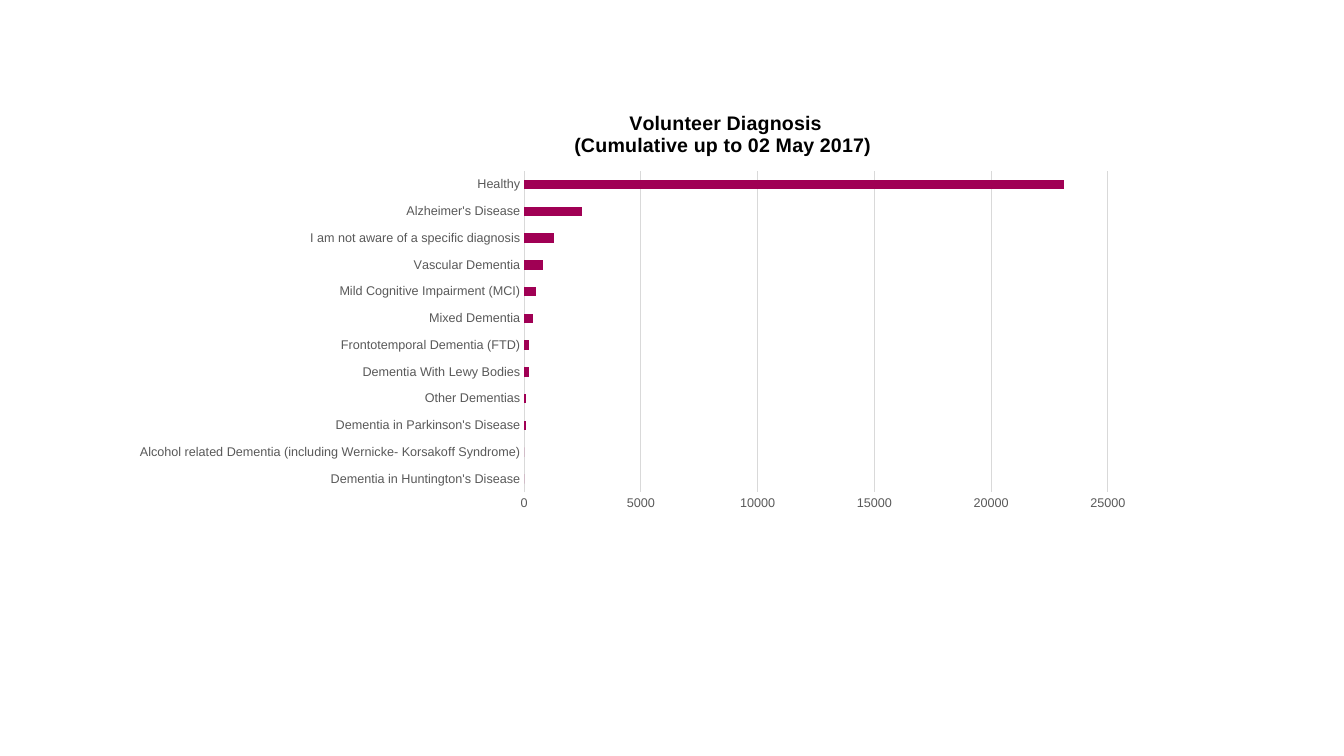
"""Build a slide with a bar chart of volunteer diagnoses."""
import pptx
import pptx.chart.data
import pptx.dml.color
import pptx.enum.chart
import pptx.oxml
import pptx.oxml.ns
import pptx.util

Cm, Pt = pptx.util.Cm, pptx.util.Pt
Color = pptx.dml.color.RGBColor
Kind = pptx.enum.chart

TITLE = "Volunteer Diagnosis\n(Cumulative up to 02 May 2017) "
COUNTS = {
    "Dementia in Huntington's Disease": 0,
    "Alcohol related Dementia (including Wernicke- Korsakoff Syndrome)": 0,
    "Dementia in Parkinson's Disease": 100,
    "Other Dementias": 100,
    "Dementia With Lewy Bodies": 200,
    "Frontotemporal Dementia (FTD)": 200,
    "Mixed Dementia": 400,
    "Mild Cognitive Impairment (MCI)": 500,
    "Vascular Dementia": 800,
    "I am not aware of a specific diagnosis": 1300,
    "Alzheimer's Disease": 2500,
    "Healthy": 23100,
}
FONT = "Arial"
BLACK = Color(0x00, 0x00, 0x00)
GREY = Color(0x59, 0x59, 0x59)
PALE = Color(0xD9, 0xD9, 0xD9)
PLUM = Color(0xA0, 0x00, 0x54)


def style(font, size, color, bold=False):
    """Set the look of a font."""
    font.name, font.size, font.bold = FONT, Pt(size), bold
    font.color.rgb = color


def rule(line):
    """Draw a thin pale line."""
    line.color.rgb = PALE
    line.width = Pt(0.75)


def place(part, index, inner=False, **spots):
    """Fix a chart part at fractions of the chart area."""
    for old in part.findall(pptx.oxml.ns.qn("c:layout")):
        part.remove(old)
    target = '<c:layoutTarget val="inner"/>' if inner else ""
    modes = "".join(f'<c:{key}Mode val="edge"/>' for key in "xy")
    sizes = "".join(f'<c:{key} val="{val}"/>' for key, val in spots.items())
    part.insert(index, pptx.oxml.parse_xml(
        f'<c:layout {pptx.oxml.ns.nsdecls("c")}><c:manualLayout>'
        f'{target}{modes}{sizes}</c:manualLayout></c:layout>'))


def main():
    """Make and save the slide."""
    deck = pptx.Presentation()
    deck.slide_width, deck.slide_height = Cm(33.87), Cm(19.05)
    slide = deck.slides.add_slide(deck.slide_layouts[6])

    data = pptx.chart.data.CategoryChartData()
    data.categories = list(COUNTS)
    data.add_series("Series 1", list(COUNTS.values()))
    chart = slide.shapes.add_chart(
        Kind.XL_CHART_TYPE.BAR_CLUSTERED,
        Cm(3.02), Cm(2.39), Cm(25.86), Cm(10.69), data).chart
    chart.has_legend = False
    style(chart.font, 10, BLACK)

    chart.has_title = True
    head = chart.chart_title
    head.text_frame.text = TITLE
    for para in head.text_frame.paragraphs:
        style(para.font, 14, BLACK, True)
    place(head._element, 1, x=0.44, y=0.03)

    plot = chart.plots[0]
    plot.gap_width = 182
    plot.vary_by_categories = False
    fill = plot.series[0].format.fill
    fill.solid()
    fill.fore_color.rgb = PLUM
    place(plot._element.getparent(), 0, True, x=0.394, y=0.18, w=0.569, h=0.757)

    cats, vals = chart.category_axis, chart.value_axis
    for axis in (cats, vals):
        axis.major_tick_mark = axis.minor_tick_mark = Kind.XL_TICK_MARK.NONE
        style(axis.tick_labels.font, 9, GREY)
    rule(cats.format.line)
    vals.format.line.fill.background()
    vals.has_major_gridlines = True
    rule(vals.major_gridlines.format.line)
    vals.minimum_scale, vals.maximum_scale, vals.major_unit = 0, 25000, 5000

    deck.save("out.pptx")


if __name__ == "__main__":
    main()
